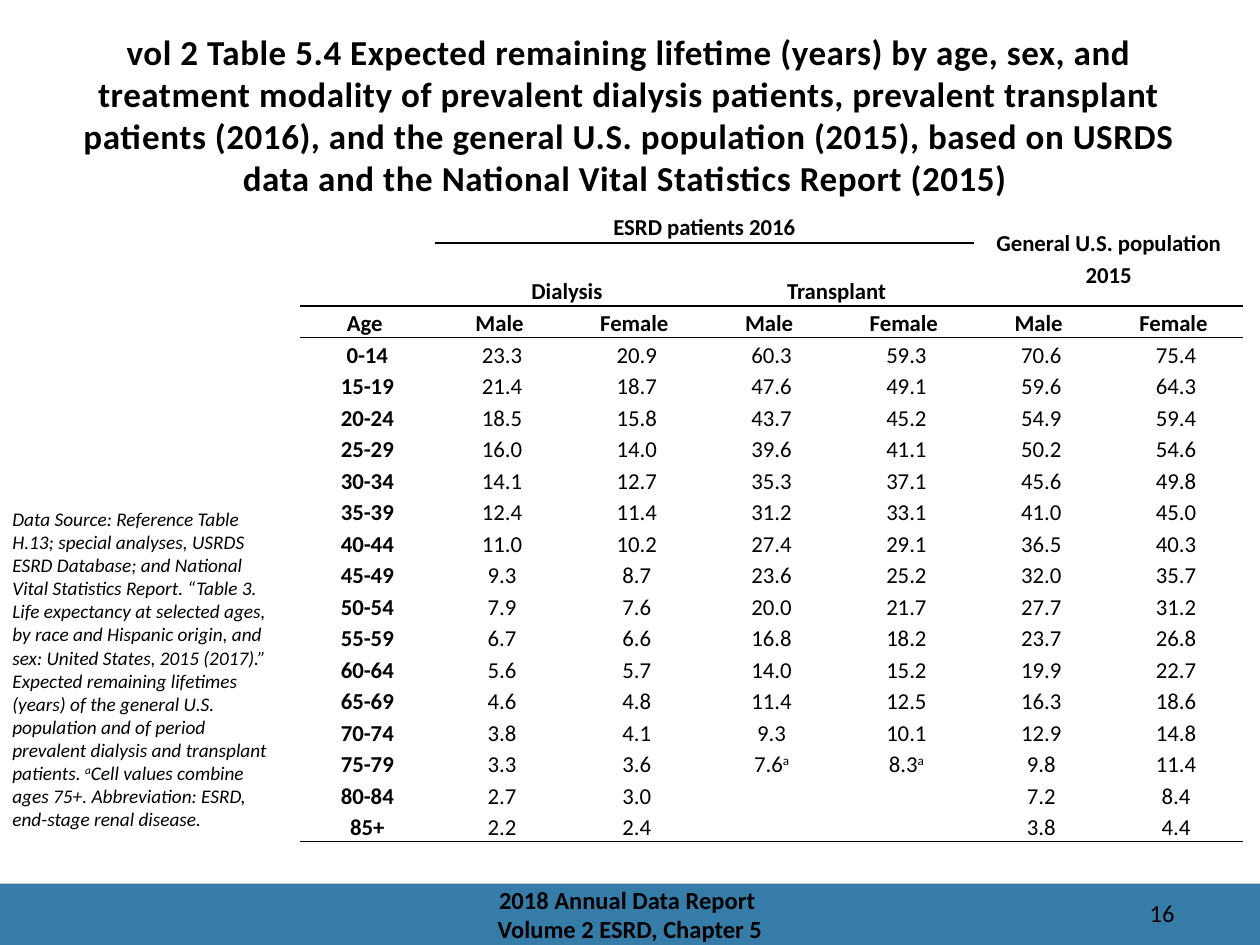
"""Build the slide on expected remaining lifetime by age, sex and treatment."""
from lxml.etree import SubElement
from pptx import Presentation
from pptx.dml.color import RGBColor
from pptx.enum.shapes import MSO_SHAPE
from pptx.enum.text import MSO_ANCHOR, PP_ALIGN
from pptx.oxml import parse_xml
from pptx.oxml.ns import nsdecls
from pptx.util import Inches, Pt

COLORS = {"text": "000000", "rule": "000000", "band": "367CA8"}

deck = Presentation()
deck.slide_width, deck.slide_height = Inches(10), Inches(7.5)
slide = deck.slides.add_slide(deck.slide_layouts[5])


def share(left, top, width, height):
    """Turn percentages of the slide into lengths."""
    across, down = deck.slide_width / 100, deck.slide_height / 100
    return [int(n) for n in (left * across, top * down, width * across, height * down)]


def style(frame, size, bold=False, italic=False, align=PP_ALIGN.CENTER, anchor=MSO_ANCHOR.TOP):
    """Format the text of a frame."""
    frame.word_wrap = True
    frame.vertical_anchor = anchor
    for paragraph in frame.paragraphs:
        paragraph.alignment = align
        for run in paragraph.runs:
            run.font.name, run.font.size = "Calibri", Pt(size)
            run.font.bold, run.font.italic = bold, italic
            run.font.color.rgb = RGBColor.from_string(COLORS["text"])


band = slide.shapes.add_shape(MSO_SHAPE.RECTANGLE, *share(0, 93.5, 100, 6.5))
band.shadow.inherit = False
band.fill.solid()
band.fill.fore_color.rgb = RGBColor.from_string(COLORS["band"])
band.line.fill.background()

heading = slide.shapes.title
heading.left, heading.top, heading.width, heading.height = share(3.5, 2.1, 92.9, 20)
heading.text_frame.text = (
    "vol 2 Table 5.4 Expected remaining lifetime (years) by age, sex, and treatment modality "
    "of prevalent dialysis patients, prevalent transplant patients (2016), and the general "
    "U.S. population (2015), based on USRDS data and the National Vital Statistics Report (2015) "
)
style(heading.text_frame, 20, bold=True, anchor=MSO_ANCHOR.MIDDLE)
heading.text_frame.paragraphs[0].runs[0].font._element.set("spc", "30")

page = slide.shapes.add_textbox(*share(84.2, 94.4, 10, 4)).text_frame
page.text = "16"
style(page, 14, align=PP_ALIGN.RIGHT)

report = slide.shapes.add_textbox(*share(33.1, 93.5, 33.8, 6.5)).text_frame
report.text = "2018 Annual Data Report \vVolume 2 ESRD, Chapter 5"
style(report, 14, bold=True, anchor=MSO_ANCHOR.MIDDLE)

HEADERS = [
    ["", "ESRD patients 2016", "", "", "", "General U.S. population 2015", ""],
    ["", "Dialysis ", "", "Transplant ", "", "", ""],
    ["Age "] + ["Male ", "Female "] * 3,
]
LIFETIMES = [
    ["0-14", "23.3", "20.9", "60.3", "59.3", "70.6", "75.4"],
    ["15-19", "21.4", "18.7", "47.6", "49.1", "59.6", "64.3"],
    ["20-24", "18.5", "15.8", "43.7", "45.2", "54.9", "59.4"],
    ["25-29", "16.0", "14.0", "39.6", "41.1", "50.2", "54.6"],
    ["30-34", "14.1", "12.7", "35.3", "37.1", "45.6", "49.8"],
    ["35-39", "12.4", "11.4", "31.2", "33.1", "41.0", "45.0"],
    ["40-44", "11.0", "10.2", "27.4", "29.1", "36.5", "40.3"],
    ["45-49", "9.3", "8.7", "23.6", "25.2", "32.0", "35.7"],
    ["50-54", "7.9", "7.6", "20.0", "21.7", "27.7", "31.2"],
    ["55-59", "6.7", "6.6", "16.8", "18.2", "23.7", "26.8"],
    ["60-64", "5.6", "5.7", "14.0", "15.2", "19.9", "22.7"],
    ["65-69", "4.6", "4.8", "11.4", "12.5", "16.3", "18.6"],
    ["70-74", "3.8", "4.1", "9.3", "10.1", "12.9", "14.8"],
    ["75-79", "3.3", "3.6", "7.6a", "8.3a", "9.8", "11.4"],
    ["80-84", "2.7", "3.0", "", "", "7.2", "8.4"],
    ["85+", "2.2", "2.4", "", "", "3.8", "4.4"],
]
rows = HEADERS + LIFETIMES
last = len(rows) - 1
lifetimes = slide.shapes.add_table(len(rows), 7, *share(23.8, 22.1, 74.9, 67.7)).table
lifetimes.first_row = lifetimes.horz_banding = False
lifetimes._tbl.tblPr.find("{*}tableStyleId").text = "{2D5ABB26-0587-4C30-8999-92F81FD0307C}"
for r, row in enumerate(lifetimes.rows):
    row.height = Inches({0: 0.27, 1: 0.5}.get(r, 0.25))

for r, texts in enumerate(rows):
    for c, text in enumerate(texts):
        cell = lifetimes.cell(r, c)
        cell.margin_left = cell.margin_right = Inches(0.07)
        cell.margin_top = cell.margin_bottom = 0
        cell.fill.background()
        paragraph = cell.text_frame.paragraphs[0]
        paragraph.line_spacing = 1.15
        noted = r >= len(HEADERS) and text.endswith("a")
        if text:
            paragraph.add_run().text = text[:-1] if noted else text
            if noted:
                paragraph.add_run().text = "a"
            style(cell.text_frame, 13, bold=r < len(HEADERS) or c == 0)
            if noted:
                paragraph.runs[1].font._element.set("baseline", "30000")
        else:
            SubElement(paragraph._p, paragraph._p.tag[:-1] + "endParaRPr", sz="1300")
        cell.vertical_anchor = MSO_ANCHOR.MIDDLE if r == 0 else MSO_ANCHOR.BOTTOM
        underlined = r in (1, last) or (r == 0 and 1 <= c <= 4)
        if underlined or r == 2:
            side = "lnB" if underlined else "lnT"
            cell._tc.get_or_add_tcPr().insert(0, parse_xml(
                f'<a:{side} {nsdecls("a")} w="12700"><a:solidFill>'
                f'<a:srgbClr val="{COLORS["rule"]}"/></a:solidFill></a:{side}>'))

for top, left, bottom, right in [(0, 1, 0, 4), (0, 5, 1, 6), (1, 1, 1, 2), (1, 3, 1, 4)]:
    lifetimes.cell(top, left).merge(lifetimes.cell(bottom, right))

source = slide.shapes.add_textbox(*share(0, 53, 22.6, 35.9)).text_frame
for part in (
    "Data Source: Reference Table H.13; special analyses, USRDS ESRD Database; and National "
    "Vital Statistics Report. “Table 3. Life expectancy at selected ages, by race and Hispanic "
    "origin, and sex: United States, 2015 (2017).” Expected remaining lifetimes (years) of the "
    "general U.S. population and of period prevalent dialysis and transplant patients. ",
    "a",
    "Cell values combine ages 75+. Abbreviation: ESRD, end-stage renal disease.",
):
    source.paragraphs[0].add_run().text = part
style(source, 11, italic=True, align=PP_ALIGN.LEFT)
source.paragraphs[0].runs[1].font._element.set("baseline", "30000")

deck.save("out.pptx")
